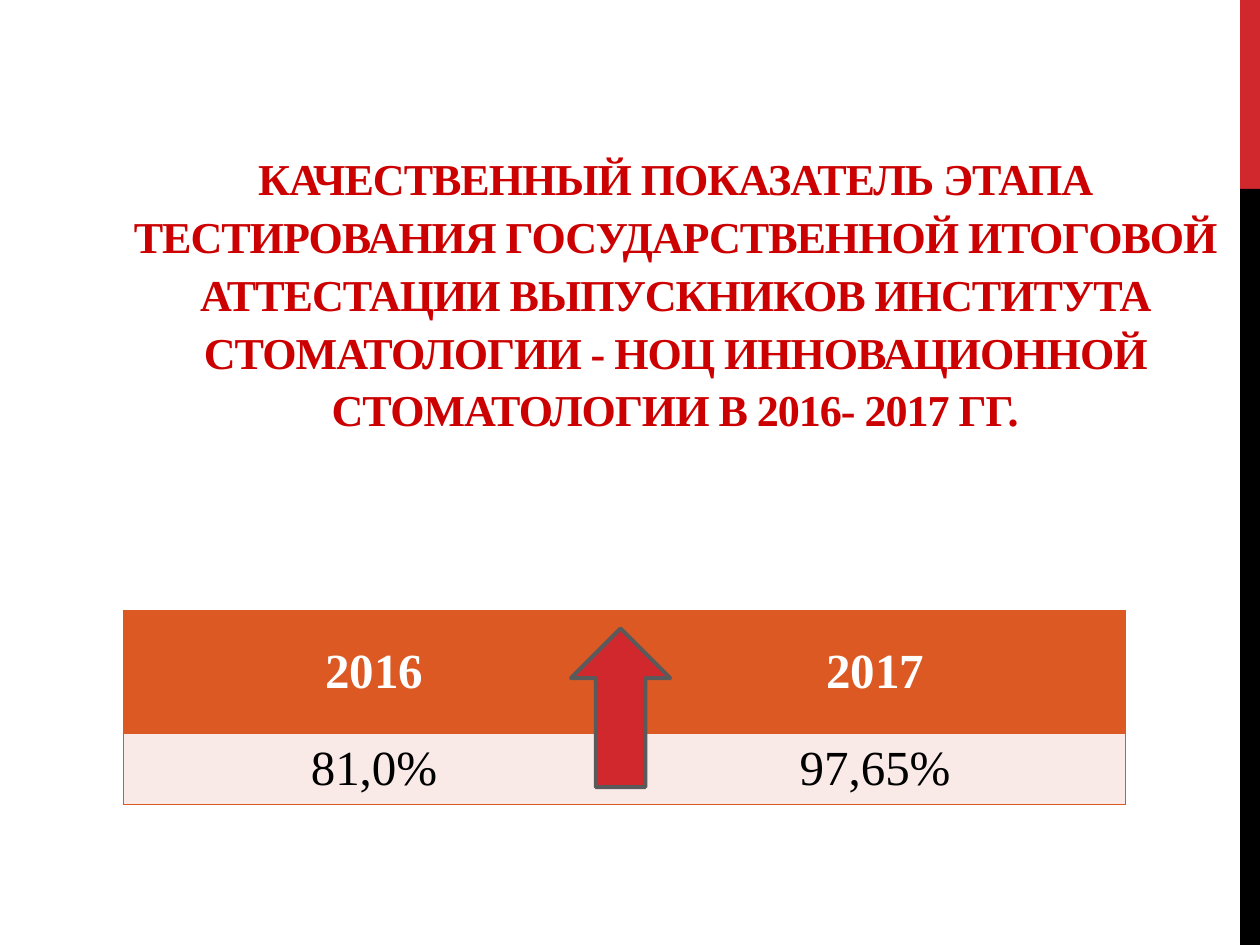
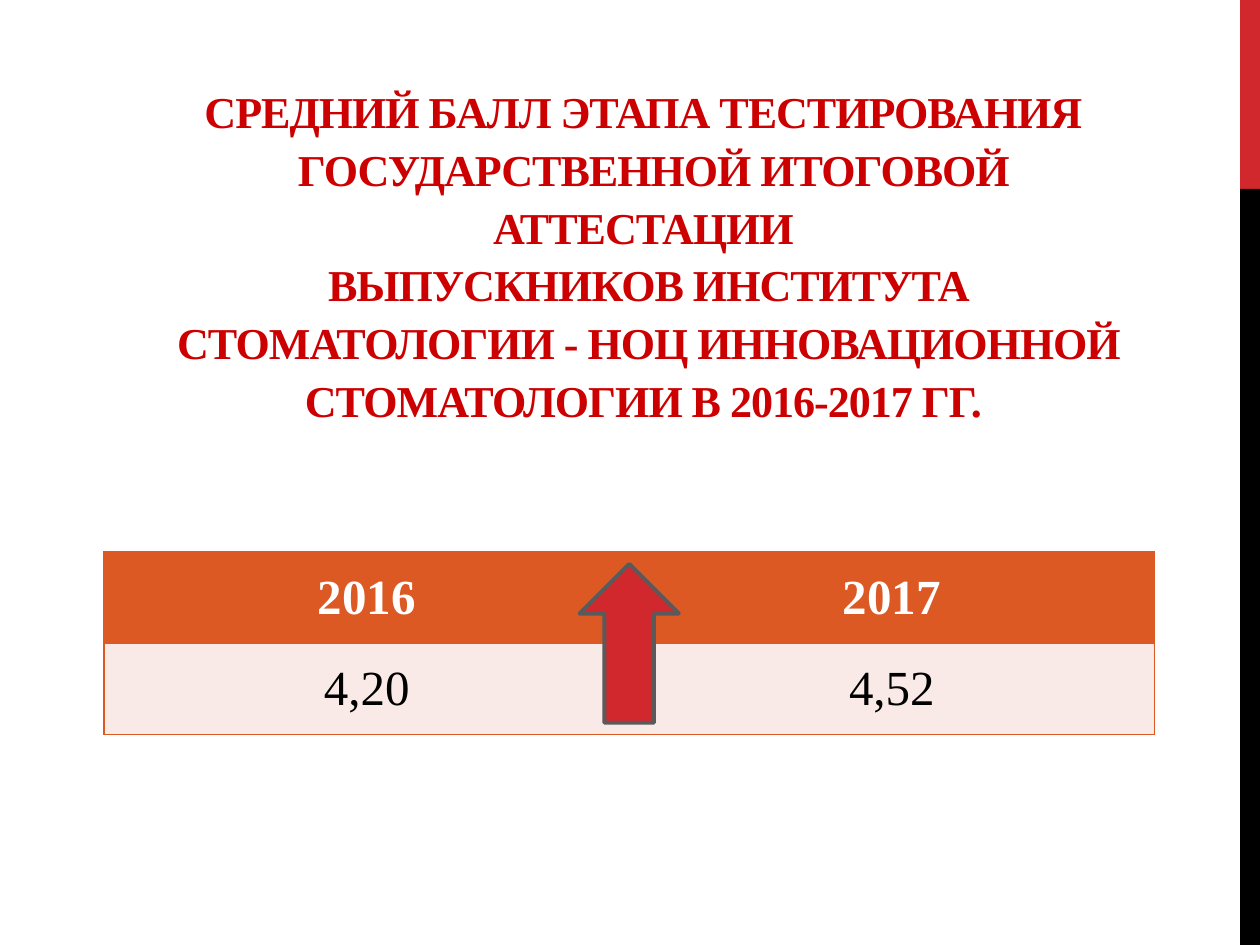
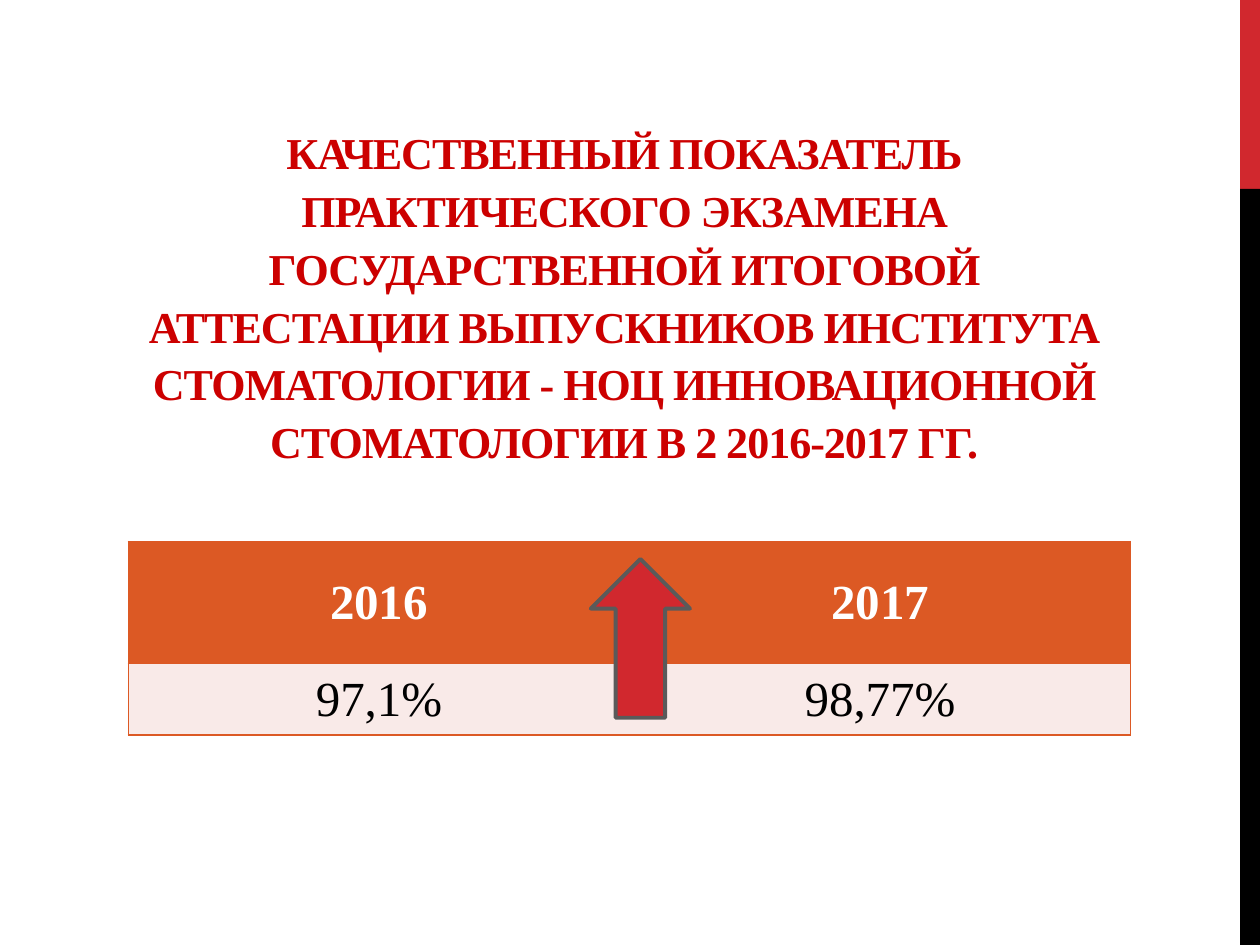
from collections import namedtuple

from lxml import etree
from pptx import Presentation
from pptx.dml.color import RGBColor
from pptx.enum.shapes import MSO_SHAPE
from pptx.enum.text import MSO_ANCHOR, MSO_AUTO_SIZE, PP_ALIGN
from pptx.oxml.ns import qn
from pptx.util import Cm, Pt

RECTANGLE = MSO_SHAPE.RECTANGLE
UP_ARROW = MSO_SHAPE.UP_ARROW
CENTER = PP_ALIGN.CENTER
MIDDLE, BOTTOM = MSO_ANCHOR.MIDDLE, MSO_ANCHOR.BOTTOM
NO_AUTOFIT = MSO_AUTO_SIZE.NONE

COLORS = {
    "title": "CC0000",
    "accent": "D1282E",
    "band": "000000",
    "header": "DC5924",
    "header_text": "FFFFFF",
    "value": "F9EAE8",
    "value_text": "000000",
    "arrow_line": "5A5A5A",
}
FONT = "Times New Roman"
PLAIN_TABLE_STYLE = "{2D5ABB26-0587-4C30-8999-92F81FD0307C}"
TITLE_ONLY = 5
SLIDE_WIDTH, SLIDE_HEIGHT = 25.4, 19.05
BAND_WIDTH, BAND_SPLIT = 0.4, 3.81
ARROW_WIDTH, ARROW_HEIGHT = 2, 3.2

# Boxes are in centimetres
Box = namedtuple("Box", "left top width height")
Comparison = namedtuple(
    "Comparison", "title title_box values table_box header_height arrow_shift")

COMPARISONS = [
    Comparison(
        "КАЧЕСТВЕННЫЙ ПОКАЗАТЕЛЬ ЭТАПА ТЕСТИРОВАНИЯ ГОСУДАРСТВЕННОЙ ИТОГОВОЙ "
        "АТТЕСТАЦИИ ВЫПУСКНИКОВ ИНСТИТУТА СТОМАТОЛОГИИ - НОЦ ИННОВАЦИОННОЙ "
        "СТОМАТОЛОГИИ В 2016- 2017 ГГ.",
        Box(2.31, 4.72, 22.6, 4.19),
        ("81,0%", "97,65%"), Box(2.49, 12.32, 20.2, 3.9), 2.46, -0.08),
    Comparison(
        "СРЕДНИЙ БАЛЛ ЭТАПА ТЕСТИРОВАНИЯ \v ГОСУДАРСТВЕННОЙ ИТОГОВОЙ "
        "АТТЕСТАЦИИ \vВЫПУСКНИКОВ ИНСТИТУТА СТОМАТОЛОГИИ - НОЦ ИННОВАЦИОННОЙ "
        "СТОМАТОЛОГИИ В 2016-2017 ГГ. ",
        Box(2.77, 5.77, 20.6, 2.95),
        ("4,20", "4,52"), Box(2.1, 11.13, 21.17, 3.68), 1.84, 0),
    Comparison(
        "КАЧЕСТВЕННЫЙ ПОКАЗАТЕЛЬ ПРАКТИЧЕСКОГО ЭКЗАМЕНА ГОСУДАРСТВЕННОЙ "
        "ИТОГОВОЙ АТТЕСТАЦИИ ВЫПУСКНИКОВ ИНСТИТУТА СТОМАТОЛОГИИ - НОЦ "
        "ИННОВАЦИОННОЙ СТОМАТОЛОГИИ В 2 2016-2017 ГГ.",
        Box(2.18, 5.36, 20.8, 4.19),
        ("97,1%", "98,77%"), Box(2.59, 10.92, 20.2, 3.9), 2.46, 0.22),
]


def rgb(name):
    return RGBColor.from_string(COLORS[name])


def lengths(box):
    return [Cm(value) for value in box]


def style_paragraph(paragraph, size, color, bold):
    paragraph.alignment = CENTER
    font = paragraph.font
    font.name, font.size, font.bold = FONT, Pt(size), bold
    font.color.rgb = rgb(color)
    return font


def add_filled_shape(slide, preset, box, color):
    shape = slide.shapes.add_shape(preset, *lengths(box))
    shape.shadow.inherit = False
    shape.fill.solid()
    shape.fill.fore_color.rgb = rgb(color)
    shape.line.fill.background()
    return shape


def add_side_bands(slide, box):
    """Split the side strip into a short accent band and a long dark one."""
    accent = box._replace(height=BAND_SPLIT)
    dark = box._replace(top=box.top + BAND_SPLIT, height=box.height - BAND_SPLIT)
    add_filled_shape(slide, RECTANGLE, accent, "accent")
    add_filled_shape(slide, RECTANGLE, dark, "band")


def format_title(slide, text, box):
    title = slide.shapes.title
    title.left, title.top, title.width, title.height = lengths(box)
    frame = title.text_frame
    frame.text = text
    frame.word_wrap = True
    frame.auto_size = NO_AUTOFIT
    frame.vertical_anchor = BOTTOM
    paragraph = frame.paragraphs[0]
    paragraph.line_spacing = Pt(33)
    font = style_paragraph(paragraph, 25.2, "title", True)
    font._element.set("spc", "-60")


def add_borders(cell, sides):
    """Draw cell borders; sides come in the order L, R, T, B."""
    properties = cell._tc.get_or_add_tcPr()
    for side in sides:
        line = etree.SubElement(properties, qn(f"a:ln{side}"), w=str(Pt(1)))
        fill = etree.SubElement(line, qn("a:solidFill"))
        etree.SubElement(fill, qn("a:srgbClr"), val=COLORS["header"])


def add_year_table(slide, values, box, header_height):
    table = slide.shapes.add_table(2, 2, *lengths(box)).table
    table._tbl.tblPr.find(qn("a:tableStyleId")).text = PLAIN_TABLE_STYLE
    table.rows[0].height = Cm(header_height)
    table.rows[1].height = Cm(box.height - header_height)
    rows = [("header", ("2016", "2017")), ("value", values)]
    for row, (kind, texts) in enumerate(rows):
        for column, text in enumerate(texts):
            cell = table.cell(row, column)
            cell.text = text
            cell.vertical_anchor = MIDDLE
            add_borders(cell, "LR"[column] + "TB")
            cell.fill.solid()
            cell.fill.fore_color.rgb = rgb(kind)
            style_paragraph(cell.text_frame.paragraphs[0], 28,
                            f"{kind}_text", kind == "header")


def add_growth_arrow(slide, box, shift):
    """Centre the arrow on the table box, moved sideways by shift."""
    arrow_box = Box(box.left + (box.width - ARROW_WIDTH) / 2 + shift,
                    box.top + (box.height - ARROW_HEIGHT) / 2,
                    ARROW_WIDTH, ARROW_HEIGHT)
    arrow = add_filled_shape(slide, UP_ARROW, arrow_box, "accent")
    arrow.line.color.rgb = rgb("arrow_line")
    arrow.line.width = Pt(2.25)


def add_comparison_slide(deck, comparison):
    slide = deck.slides.add_slide(deck.slide_layouts[TITLE_ONLY])
    add_side_bands(slide, Box(SLIDE_WIDTH - BAND_WIDTH, 0, BAND_WIDTH, SLIDE_HEIGHT))
    format_title(slide, comparison.title, comparison.title_box)
    add_year_table(slide, comparison.values, comparison.table_box,
                   comparison.header_height)
    add_growth_arrow(slide, comparison.table_box, comparison.arrow_shift)


def main():
    deck = Presentation()
    deck.slide_width, deck.slide_height = Cm(SLIDE_WIDTH), Cm(SLIDE_HEIGHT)
    for comparison in COMPARISONS:
        add_comparison_slide(deck, comparison)
    deck.save("out.pptx")


if __name__ == "__main__":
    main()
